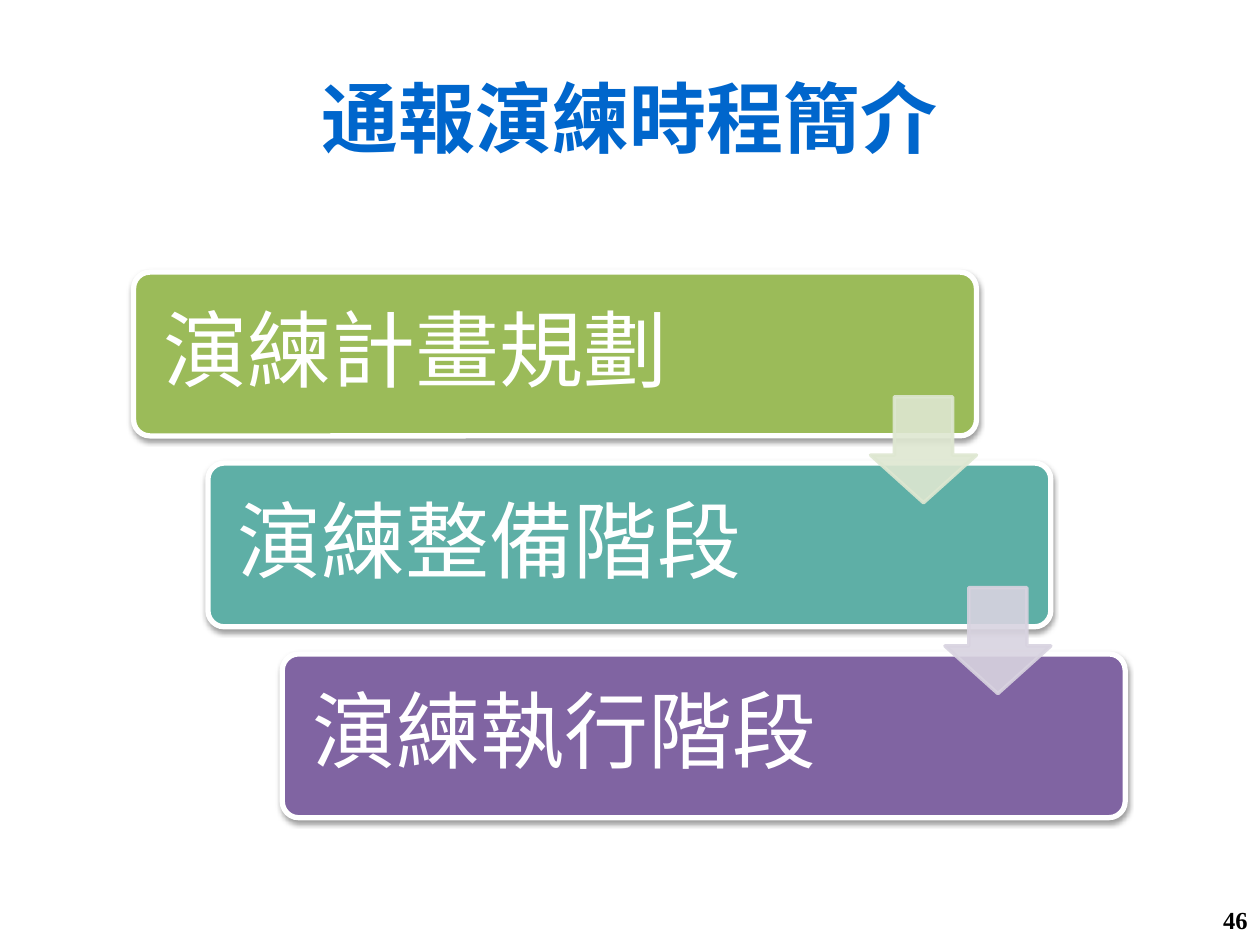
from dataclasses import dataclass

from lxml import etree
from pptx import Presentation
from pptx.dml.color import RGBColor as Rgb
from pptx.enum import shapes as sh, text as tx
from pptx.oxml import parse_xml
from pptx.oxml.ns import nsdecls, qn
from pptx.util import Inches, Pt

TITLE = "通報演練時程簡介"
PAGE = "46"
STEPS = [  # text, box colour, colour of the arrow to the next step
    ("演練計畫規劃", "9BBB59", "DEE7D1"),
    ("演練整備階段", "5EAFA6", "D8D3E0"),
    ("演練執行階段", "8064A2", None),
]


@dataclass
class Theme:
    font: str = "Times New Roman"
    title: str = "0066CC"
    light: str = "FFFFFF"
    dark: str = "000000"
    head: int = 44
    body: int = 48
    note: int = 14


T = Theme()
WIDE, HIGH = 10, 7.5
LEFT, TOP = 1.06, 2.16
BOX_W, BOX_H = 6.69, 1.3
STEP_X, STEP_Y = 0.59, 1.515
ARROW = 0.84
ARROW_Y = 0.99  # from the top of the box it leaves


def write(frame, words, size, color, align, bold=False):
    frame.word_wrap = True
    frame.vertical_anchor = tx.MSO_ANCHOR.MIDDLE
    par = frame.paragraphs[0]
    par.text = words
    par.alignment = align
    font = par.font
    font.name, font.size, font.bold = T.font, Pt(size), bold
    font.color.rgb = Rgb.from_string(color)
    return par


def draw(slide, kind, place, fill, line, width, adjust):
    shape = slide.shapes.add_shape(kind, *map(Inches, place))
    for i, value in enumerate(adjust):
        shape.adjustments[i] = value
    shape.shadow.inherit = False
    shape.fill.solid()
    shape.fill.fore_color.rgb = Rgb.from_string(fill)
    shape.line.color.rgb = Rgb.from_string(line)
    shape.line.width = Pt(width)
    return shape


def shade(shape):
    """Give the shape a soft shadow just below it."""
    props = shape._element.spPr
    props.find(qn("a:effectLst")).append(parse_xml(
        f'<a:outerShdw {nsdecls("a")} blurRad="{Pt(3.1)}" dist="{Pt(1.6)}" '
        f'dir="5400000" rotWithShape="0"><a:srgbClr val="{T.dark}">'
        '<a:alpha val="38000"/></a:srgbClr></a:outerShdw>'))


def fade(shape, share):
    """Set the opacity of fill and line."""
    for color in shape._element.spPr.iter(qn("a:srgbClr")):
        etree.SubElement(color, qn("a:alpha")).set("val", str(share * 1000))


def add_box(slide, x, y, words, fill):
    box = draw(slide, sh.MSO_SHAPE.ROUNDED_RECTANGLE, (x, y, BOX_W, BOX_H),
               fill, T.light, 3, [0.1])
    shade(box)
    frame = box.text_frame
    frame.margin_left = frame.margin_right = Inches(0.2)
    frame.margin_top = frame.margin_bottom = Inches(0.2)
    par = write(frame, words, T.body, T.light, tx.PP_ALIGN.LEFT)
    par.line_spacing = 0.9


def add_arrow(slide, x, y, color):
    place = (x + BOX_W - ARROW, y + ARROW_Y, ARROW, ARROW)
    arrow = draw(slide, sh.MSO_SHAPE.DOWN_ARROW, place, color, color, 2,
                 [0.55, 0.45])
    fade(arrow, 90)


def main():
    deck = Presentation()
    deck.slide_width, deck.slide_height = Inches(WIDE), Inches(HIGH)
    slide = deck.slides.add_slide(deck.slide_layouts[5])

    title = slide.shapes.title
    title.left, title.top = Inches(0.5), Inches(0.3)
    title.width, title.height = Inches(9), Inches(1.25)
    write(title.text_frame, TITLE, T.head, T.title, tx.PP_ALIGN.CENTER, True)

    spots = [(LEFT + i * STEP_X, TOP + i * STEP_Y) for i in range(len(STEPS))]
    for (x, y), (words, fill, _) in zip(spots, STEPS):
        add_box(slide, x, y, words, fill)
    for (x, y), (_, _, color) in zip(spots, STEPS):
        if color:
            add_arrow(slide, x, y, color)

    wide, high = 2.33, 0.4
    place = (WIDE - wide, HIGH - high, wide, high)
    page = slide.shapes.add_textbox(*map(Inches, place))
    write(page.text_frame, PAGE, T.note, T.dark, tx.PP_ALIGN.RIGHT, True)

    deck.save("out.pptx")


if __name__ == "__main__":
    main()
